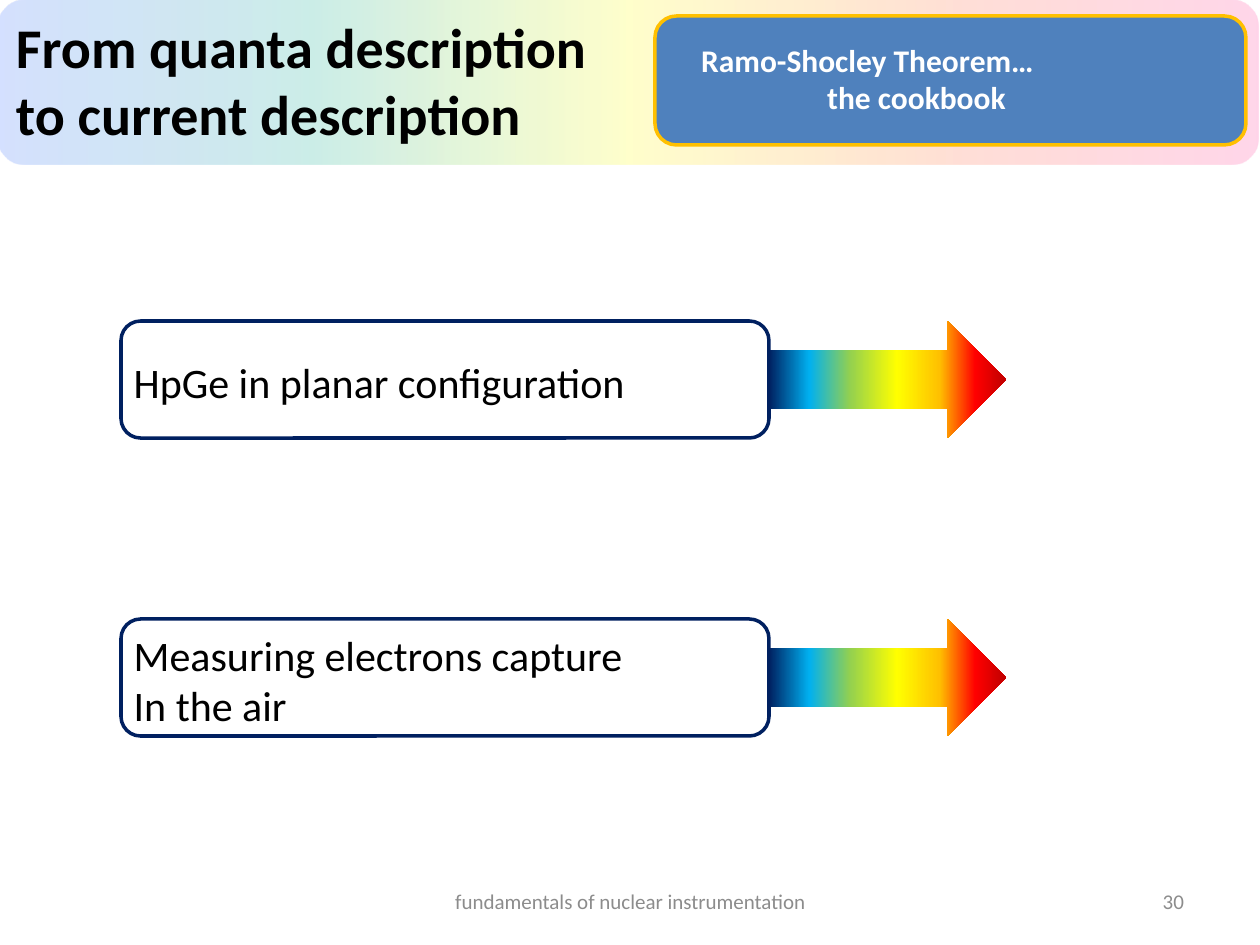
from lxml.etree import SubElement
from pptx import Presentation
from pptx.dml.color import RGBColor as RGB
from pptx.enum.shapes import MSO_SHAPE as Shape
from pptx.enum.text import MSO_ANCHOR as Anchor, MSO_AUTO_SIZE as Fit, PP_ALIGN as Align
from pptx.oxml.ns import qn
from pptx.util import Pt

BLACK, WHITE = RGB(0, 0, 0), RGB(255, 255, 255)
GRAY, NAVY = RGB(0x8C, 0x8C, 0x8C), RGB(0, 0x20, 0x60)
BLUE, GOLD = RGB(0x4F, 0x81, 0xBD), RGB(0xFF, 0xC0, 0)
PASTEL = [(0, RGB(0xFF, 0x33, 0x99)), (25, RGB(0xFF, 0x66, 0x33)),
          (50, RGB(0xFF, 0xFF, 0)), (75, RGB(0x01, 0xA7, 0x8F)),
          (100, RGB(0x33, 0x66, 0xFF))]
RAINBOW = [(0, NAVY), (17, RGB(0, 0xB0, 0xF0)), (34, RGB(0x92, 0xD0, 0x50)),
           (54, RGB(0xFF, 0xFF, 0)), (72, GOLD), (87, RGB(0xFF, 0, 0)),
           (100, RGB(0xC0, 0, 0))]

# Content
TITLE = ["From quanta description", "to current description"]
TOPIC = ["Ramo-Shocley Theorem…", "the cookbook"]
CASES = [["HpGe in planar configuration"],
         ["Measuring electrons capture", "In the air"]]
FOOTER = [("fundamentals of nuclear instrumentation", (431, 876, 399, 50), Align.CENTER),
          ("30", (903, 876, 294, 50), Align.RIGHT)]

# Layout in px
SCALE = 914400 / 126
CASE_X, CASE_Y, CASE_W, CASE_H, STEP = 121, 321, 648, 117, 298
ARROW_W = 237


def px(n):
    return round(n * SCALE)


def write(shape, lines, size, color=BLACK, bold=False, align=Align.LEFT,
          anchor=Anchor.MIDDLE, pads=(13, 6, 13, 6), indent=0):
    frame = shape.text_frame
    frame.auto_size, frame.word_wrap = Fit.NONE, True
    frame.vertical_anchor = anchor
    (frame.margin_left, frame.margin_top,
     frame.margin_right, frame.margin_bottom) = map(px, pads)
    for i, line in enumerate(lines):
        para = frame.paragraphs[0] if i == 0 else frame.add_paragraph()
        para.alignment = align
        if i and indent:
            para._p.get_or_add_pPr().set("marL", str(px(indent)))
        run = para.add_run()
        run.text = line
        font = run.font
        font.name, font.size, font.bold = "Calibri", Pt(size), bold
        font.color.rgb = color


def draw(kind, box, fill=None, line=None):
    shape = slide.shapes.add_shape(kind, *map(px, box))
    shape.shadow.inherit = False
    if fill is not None:
        shape.fill.solid()
        shape.fill.fore_color.rgb = fill
    if line is None:
        shape.line.fill.background()
    else:
        shape.line.color.rgb, shape.line.width = line, Pt(2)
    return shape


def blend(shape, stops, angle=0, alpha=100):
    shape.fill.gradient()
    grad = shape.element.spPr.find(qn("a:gradFill"))
    steps = grad.find(qn("a:gsLst"))
    for old in list(steps):
        steps.remove(old)
    for pos, color in stops:
        stop = SubElement(steps, qn("a:gs"), pos=str(pos * 1000))
        tint = SubElement(stop, qn("a:srgbClr"), val=str(color))
        if alpha < 100:
            SubElement(tint, qn("a:alpha"), val=str(alpha * 1000))
    grad.find(qn("a:lin")).set("ang", str(angle * 60000))


deck = Presentation()
deck.slide_width, deck.slide_height = px(1260), px(945)
slide = deck.slides.add_slide(deck.slide_layouts[5])

# Banner behind the title
title = slide.shapes.title
banner = draw(Shape.ROUNDED_RECTANGLE, (-2, 0, 1260, 165))
blend(banner, PASTEL, angle=180, alpha=20)
title.element.addprevious(banner.element)
title.left, title.top, title.width, title.height = map(px, (3, 6, 630, 149))
write(title, TITLE, 32, bold=True, anchor=Anchor.TOP)

# Topic box
topic = draw(Shape.ROUNDED_RECTANGLE, (655, 16, 591, 129), BLUE, GOLD)
write(topic, TOPIC, 18, WHITE, bold=True, pads=(40, 0, 6, 4), indent=126)

# Cases, each with its arrow
for i, lines in enumerate(CASES):
    y = CASE_Y + i * STEP
    case = draw(Shape.ROUNDED_RECTANGLE, (CASE_X, y, CASE_W, CASE_H), WHITE, NAVY)
    write(case, lines, 24, pads=(7, 4, 7, 0))
    arrow = draw(Shape.RIGHT_ARROW, (CASE_X + CASE_W, y, ARROW_W, CASE_H))
    blend(arrow, RAINBOW)

# Footer and page number
for words, box, align in FOOTER:
    write(slide.shapes.add_textbox(*map(px, box)), [words], 12, GRAY, align=align)

deck.save("out.pptx")
